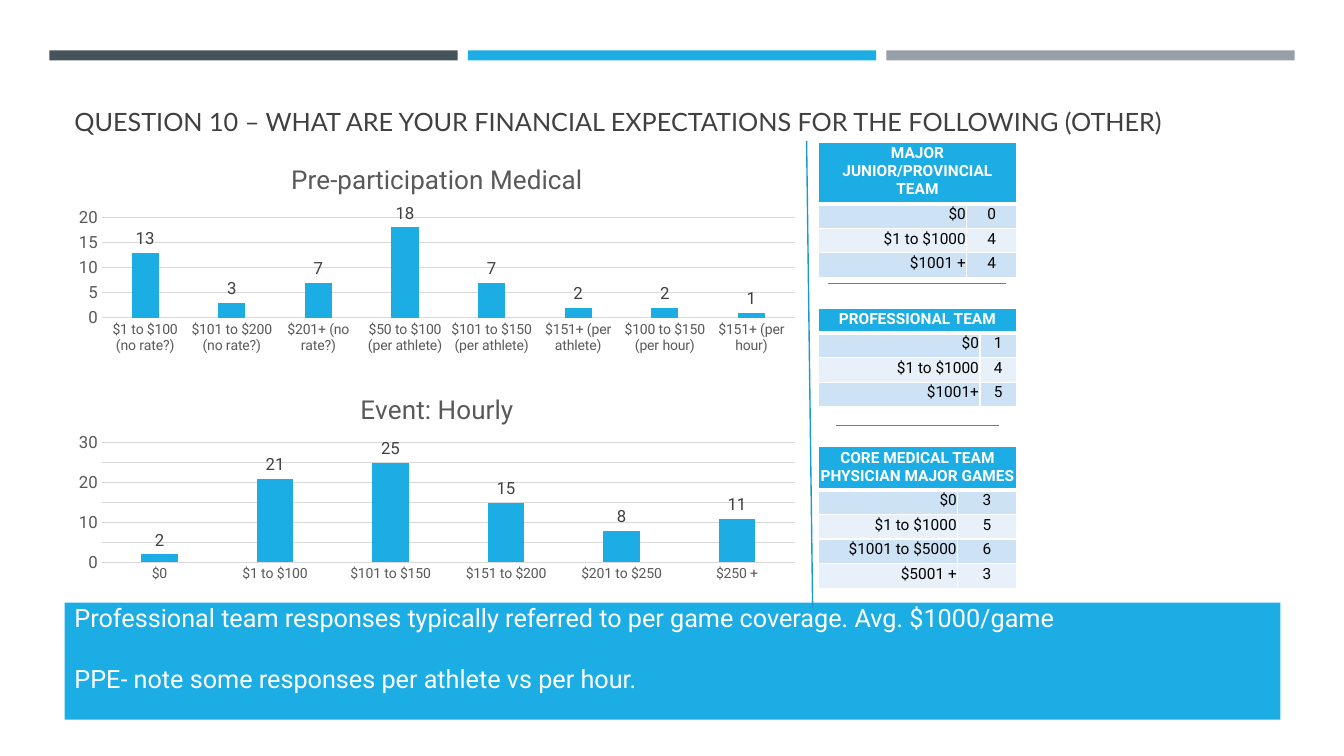
from dataclasses import dataclass
from typing import Any

import lxml.etree
import pptx
import pptx.chart.data
import pptx.dml.color
import pptx.enum.chart
import pptx.enum.shapes
import pptx.enum.text
import pptx.oxml.ns
import pptx.util

EMU_PER_PX = 9144  # 100 px to the inch
ALIGN = pptx.enum.text.PP_ALIGN
ANCHOR = pptx.enum.text.MSO_ANCHOR
qn = pptx.oxml.ns.qn


@dataclass(frozen=True)
class Theme:
    heading_font: str = "Lato"
    body_font: str = "Roboto"
    slate: str = "465359"
    blue: str = "1CADE4"
    gray: str = "969FA7"
    rule: str = "189CCE"
    grid: str = "D9D9D9"
    title: str = "404040"
    chart_text: str = "595959"
    black: str = "000000"
    white: str = "FFFFFF"
    band_dark: str = "CDE3F5"
    band_light: str = "E8F1FA"
    title_size: float = 18
    chart_title_size: float = 18.6
    value_size: float = 12
    category_size: float = 10
    table_size: float = 11


T = Theme()


@dataclass(frozen=True)
class Box:
    x: int
    y: int
    w: int
    h: int


@dataclass(frozen=True)
class Bar:
    box: Box
    color: str


@dataclass(frozen=True)
class Rule:
    x1: int
    y1: int
    x2: int
    y2: int


@dataclass(frozen=True)
class ColumnChart:
    title: str
    box: Box
    data: dict[str, int]
    top: int
    plot_y: float
    plot_h: float


@dataclass(frozen=True)
class FeeTable:
    title: str
    y: int
    header_h: int
    label_w: int
    rows: dict[str, int]


BARS = [Bar(Box(49 + 415 * i, 50, 405, 10), c) for i, c in enumerate((T.slate, T.blue, T.gray))]
RULES = [Rule(821, 281, 998, 281), Rule(829, 422, 991, 422), Rule(806, 603, 800, 140)]
CHARTS = [
    ColumnChart("Pre-participation Medical", Box(64, 147, 739, 208), {
        "$1 to $100 (no rate?)": 13, "$101 to $200 (no rate?)": 3, "$201+ (no rate?)": 7,
        "$50 to $100 (per athlete)": 18, "$101 to $150 (per athlete)": 7,
        "$151+ (per athlete)": 2, "$100 to $150 (per hour)": 2, "$151+ (per hour)": 1,
    }, 20, 0.33, 0.48),
    ColumnChart("Event: Hourly", Box(64, 375, 739, 208), {
        "$0": 2, "$1 to $100": 21, "$101 to $150": 25,
        "$151 to $200": 15, "$201 to $250": 8, "$250 +": 11,
    }, 30, 0.31, 0.57),
]
TABLE_X, TABLE_W, ROW_H = 812, 196, 24
TABLES = [
    FeeTable("MAJOR JUNIOR/PROVINCIAL TEAM", 141, 60, 147, {"$0": 0, "$1 to $1000": 4, "$1001 +": 4}),
    FeeTable("PROFESSIONAL TEAM", 306, 24, 160, {"$0": 1, "$1 to $1000": 4, "$1001+": 5}),
    FeeTable("CORE MEDICAL TEAM PHYSICIAN MAJOR GAMES", 443, 43, 138,
             {"$0": 3, "$1 to $1000": 5, "$1001 to $5000": 6, "$5001 +": 3}),
]
NOTES = ["Professional team responses typically referred to per game coverage. Avg. $1000/game",
         "PPE- note some responses per athlete vs per hour."]


def px(n: int) -> pptx.util.Emu:
    return pptx.util.Emu(n * EMU_PER_PX)


def place(b: Box) -> list[pptx.util.Emu]:
    return [px(n) for n in (b.x, b.y, b.w, b.h)]


def rgb(color: str) -> pptx.dml.color.RGBColor:
    return pptx.dml.color.RGBColor.from_string(color)


def apply(obj: Any, values: dict[str, Any]) -> None:
    for name, value in values.items():
        setattr(obj, name, value)


def style_font(font: Any, size: float, color: str, name: str = T.body_font, bold: bool = False) -> None:
    apply(font, {"size": pptx.util.Pt(size), "name": name, "bold": bold})
    font.color.rgb = rgb(color)


def fill(obj: Any, color: str) -> None:
    obj.fill.solid()
    obj.fill.fore_color.rgb = rgb(color)


def style_line(line: Any, color: str, width: float) -> None:
    line.color.rgb = rgb(color)
    line.width = pptx.util.Pt(width)


def add_rect(s: Any, box: Box, color: str) -> Any:
    sp = s.shapes.add_shape(pptx.enum.shapes.MSO_SHAPE.RECTANGLE, *place(box))
    fill(sp, color)
    sp.line.fill.background()
    sp.shadow.inherit = False
    return sp


def add_rule(s: Any, rule: Rule) -> None:
    ends = [px(n) for n in (rule.x1, rule.y1, rule.x2, rule.y2)]
    sp = s.shapes.add_connector(pptx.enum.shapes.MSO_CONNECTOR.STRAIGHT, *ends)
    style_line(sp.line, T.rule, 1)
    lxml.etree.SubElement(sp.element.spPr, qn("a:effectLst"))


def add_title(s: Any, text: str) -> None:
    tf = s.shapes.add_textbox(*place(Box(64, 77, 1206, 63))).text_frame
    apply(tf, {"word_wrap": True, "vertical_anchor": ANCHOR.BOTTOM})
    r = tf.paragraphs[0].add_run()
    r.text = text
    style_font(r.font, T.title_size, T.title, T.heading_font)


def add_notes_panel(s: Any) -> None:
    tf = add_rect(s, Box(64, 598, 1206, 116), T.blue).text_frame
    apply(tf, {"word_wrap": True, "vertical_anchor": ANCHOR.TOP, "margin_top": 0, "margin_bottom": 0})
    for i, text in enumerate(NOTES):
        p = tf.add_paragraph() if i else tf.paragraphs[0]
        apply(p, {"alignment": ALIGN.LEFT, "space_before": pptx.util.Pt(22 if i else 0)})
        r = p.add_run()
        r.text = text
        style_font(r.font, T.title_size, T.white)


def set_plot_area(chart: Any, values: dict[str, Any]) -> None:
    area = chart.element.find(".//" + qn("c:plotArea"))
    for old in area.findall(qn("c:layout")):
        area.remove(old)
    layout = lxml.etree.Element(qn("c:layout"))
    manual = lxml.etree.SubElement(layout, qn("c:manualLayout"))
    for name, value in values.items():
        lxml.etree.SubElement(manual, qn("c:" + name)).set("val", str(value))
    area.insert(0, layout)


def add_chart(s: Any, c: ColumnChart) -> None:
    enum = pptx.enum.chart
    data = pptx.chart.data.CategoryChartData()
    data.categories = list(c.data)
    data.add_series(c.title, list(c.data.values()))
    chart = s.shapes.add_chart(enum.XL_CHART_TYPE.COLUMN_CLUSTERED, *place(c.box), data).chart
    style_font(chart.font, T.category_size, T.black)
    apply(chart, {"has_legend": False, "has_title": True})
    r = chart.chart_title.text_frame.paragraphs[0].add_run()
    r.text = c.title
    style_font(r.font, T.chart_title_size, T.chart_text)
    # Axes
    for axis, size in ((chart.category_axis, T.category_size), (chart.value_axis, T.value_size)):
        apply(axis, {"major_tick_mark": enum.XL_TICK_MARK.NONE, "minor_tick_mark": enum.XL_TICK_MARK.NONE})
        style_font(axis.tick_labels.font, size, T.chart_text)
    style_line(chart.category_axis.format.line, T.grid, 0.75)
    apply(chart.value_axis, {"minimum_scale": 0, "maximum_scale": c.top, "major_unit": 5,
                             "has_major_gridlines": True})
    chart.value_axis.format.line.fill.background()
    style_line(chart.value_axis.major_gridlines.format.line, T.grid, 0.75)
    # Columns and their labels
    plot = chart.plots[0]
    apply(plot, {"gap_width": 219, "overlap": -27, "vary_by_categories": False, "has_data_labels": True})
    fill(plot.series[0].format, T.blue)
    apply(plot.data_labels, {"show_value": True, "position": enum.XL_LABEL_POSITION.OUTSIDE_END})
    style_font(plot.data_labels.font, T.value_size, T.title)
    set_plot_area(chart, {"layoutTarget": "inner", "xMode": "edge", "yMode": "edge",
                          "x": 0.05, "y": c.plot_y, "w": 0.93, "h": c.plot_h})


def set_borders(cell: Any, widths: dict[str, int]) -> None:
    tc_pr = cell._tc.get_or_add_tcPr()
    for i, (side, width) in enumerate(widths.items()):
        ln = lxml.etree.Element(qn("a:ln" + side), w=str(pptx.util.Pt(width)))
        solid = lxml.etree.SubElement(ln, qn("a:solidFill"))
        lxml.etree.SubElement(solid, qn("a:srgbClr")).set("val", T.white)
        tc_pr.insert(i, ln)


def add_fee_table(s: Any, t: FeeTable) -> None:
    grid = [(t.title, "")] + [(label, str(n)) for label, n in t.rows.items()]
    box = Box(TABLE_X, t.y, TABLE_W, t.header_h + ROW_H * len(t.rows))
    table = s.shapes.add_table(len(grid), 2, *place(box)).table
    for col, width in zip(table.columns, (t.label_w, TABLE_W - t.label_w)):
        col.width = px(width)
    table.cell(0, 0).merge(table.cell(0, 1))
    for i, texts in enumerate(grid):
        head = i == 0
        table.rows[i].height = px(t.header_h if head else ROW_H)
        for j, text in enumerate(texts):
            cell = table.cell(i, j)
            apply(cell, {"vertical_anchor": ANCHOR.BOTTOM, "margin_left": px(1), "margin_right": px(1),
                         "margin_top": px(1), "margin_bottom": px(5)})
            fill(cell, T.blue if head else T.band_dark if i % 2 else T.band_light)
            set_borders(cell, {"L": 1, "R": 1, "T": 3 if i == 1 else 1, "B": 3 if head else 1})
            p = cell.text_frame.paragraphs[0]
            p.alignment = ALIGN.CENTER if head or j else ALIGN.RIGHT
            if text:
                r = p.add_run()
                r.text = text
                style_font(r.font, T.table_size, T.white if head else T.black, bold=head)


def main() -> None:
    prs = pptx.Presentation()
    apply(prs, {"slide_width": px(1333), "slide_height": px(750)})
    s = prs.slides.add_slide(prs.slide_layouts[6])
    # Top bars, heading and notes
    for bar in BARS:
        add_rect(s, bar.box, bar.color)
    add_title(s, "QUESTION 10 – WHAT ARE YOUR FINANCIAL EXPECTATIONS FOR THE FOLLOWING (OTHER)")
    add_notes_panel(s)
    # Survey results
    for chart in CHARTS:
        add_chart(s, chart)
    for table in TABLES:
        add_fee_table(s, table)
    # Dividers
    for rule in RULES:
        add_rule(s, rule)
    prs.save("out.pptx")


if __name__ == "__main__":
    main()
